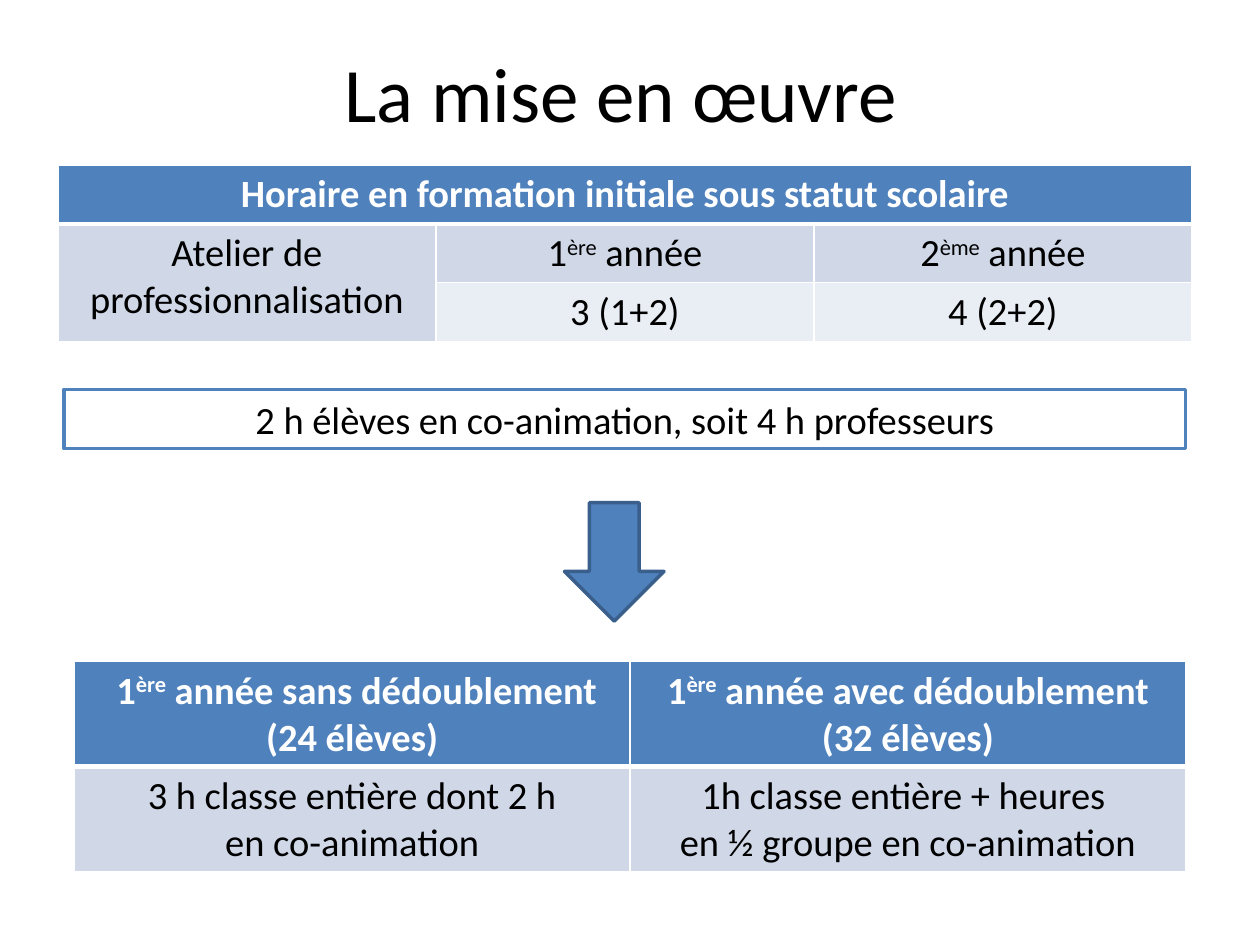
from lxml.etree import SubElement
from pptx import Presentation
from pptx.dml.color import RGBColor as RGB
from pptx.enum.shapes import MSO_SHAPE as Shape
from pptx.enum.text import MSO_ANCHOR as Anchor, PP_ALIGN as Align
from pptx.oxml.ns import qn
from pptx.util import Inches, Pt

COLORS = {
    "blue": "4F81BD",
    "outline": "3A5F8C",
    "band": "D0D8E8",
    "light": "E9EDF4",
    "white": "FFFFFF",
    "black": "000000",
}


def color(name):
    return RGB.from_string(COLORS[name])


class SlideBuilder:
    font = "Calibri"
    body_size = 22

    def __init__(self, slide):
        self.slide = slide

    def fill_text(self, frame, text, ink="black", size=body_size, bold=False):
        """Fill a frame with centred lines; text between carets is superscript."""
        frame.word_wrap = True
        style = {"name": self.font, "size": Pt(size), "bold": bold}
        for i, line in enumerate(text.split("\n")):
            paragraph = frame.paragraphs[0] if i == 0 else frame.add_paragraph()
            paragraph.alignment = Align.CENTER
            for j, part in enumerate(line.split("^")):
                run = paragraph.add_run()
                run.text = part
                for key, value in style.items():
                    setattr(run.font, key, value)
                run.font.color.rgb = color(ink)
                if j % 2:
                    run._r.get_or_add_rPr().set("baseline", "30000")

    def title(self, text, *box):
        frame = self.slide.shapes.add_textbox(*map(Inches, box)).text_frame
        frame.vertical_anchor = Anchor.MIDDLE
        self.fill_text(frame, text, size=44)

    def shape(self, kind, box, fill, line, text=None):
        shape = self.slide.shapes.add_shape(kind, *map(Inches, box))
        shape.shadow.inherit = False
        shape.fill.solid()
        shape.fill.fore_color.rgb = color(fill)
        shape.line.color.rgb = color(line)
        shape.line.width = Pt(2)
        if text:
            self.fill_text(shape.text_frame, text)

    def borders(self, cell, widths):
        """Draw white cell edges; widths maps an edge tag to points."""
        properties = cell._tc.get_or_add_tcPr()
        for edge, width in widths.items():
            line = SubElement(properties, qn(f"a:{edge}"), w=str(Pt(width)))
            fill = SubElement(line, qn("a:solidFill"))
            SubElement(fill, qn("a:srgbClr"), val=COLORS["white"])

    def table(self, box, rows, fills, merges=()):
        """Draw a table whose first row is a bold header; None marks a merged cell."""
        table = self.slide.shapes.add_table(
            len(rows), len(rows[0]), *map(Inches, box)).table
        table.first_row = table.horz_banding = False
        for r, (texts, row_fills) in enumerate(zip(rows, fills)):
            header = r == 0
            for c, (text, fill) in enumerate(zip(texts, row_fills)):
                cell = table.cell(r, c)
                self.borders(cell, {"lnL": 1, "lnR": 1, "lnT": 3 if r == 1 else 1,
                                    "lnB": 3 if header else 1})
                cell.fill.solid()
                cell.fill.fore_color.rgb = color(fill)
                if text:
                    self.fill_text(cell.text_frame, text,
                                   "white" if header else "black", bold=header)
        for first, last in merges:
            table.cell(*first).merge(table.cell(*last))


def main():
    deck = Presentation()
    deck.slide_width, deck.slide_height = Inches(10), Inches(7.5)
    page = SlideBuilder(deck.slides.add_slide(deck.slide_layouts[6]))

    page.title("La mise en œuvre ", 0.5, 0.3, 9, 0.85)
    page.table(
        (0.46, 1.31, 9, 1.4),
        [["Horaire en formation initiale sous statut scolaire", None, None],
         ["Atelier de professionnalisation", "1^ère^ année", "2^ème^ année"],
         [None, "3 (1+2)", "4 (2+2)"]],
        [["blue"] * 3, ["band"] * 3, ["band", "light", "light"]],
        merges=[((0, 0), (0, 2)), ((1, 0), (2, 0))],
    )
    page.shape(Shape.RECTANGLE, (0.51, 3.09, 8.9, 0.47), "white", "blue",
               "2 h élèves en co-animation, soit 4 h professeurs")
    page.shape(Shape.DOWN_ARROW, (4.48, 3.99, 0.79, 0.94), "blue", "outline")
    page.table(
        (0.59, 5.25, 8.82, 1.67),
        [[" 1^ère^ année sans dédoublement\n(24 élèves)",
          "1^ère^ année avec dédoublement\n(32 élèves)"],
         ["3 h classe entière dont 2 h\nen co-animation",
          "1h classe entière + heures \nen ½ groupe en co-animation"]],
        [["blue"] * 2, ["band"] * 2],
    )
    deck.save("out.pptx")


if __name__ == "__main__":
    main()
